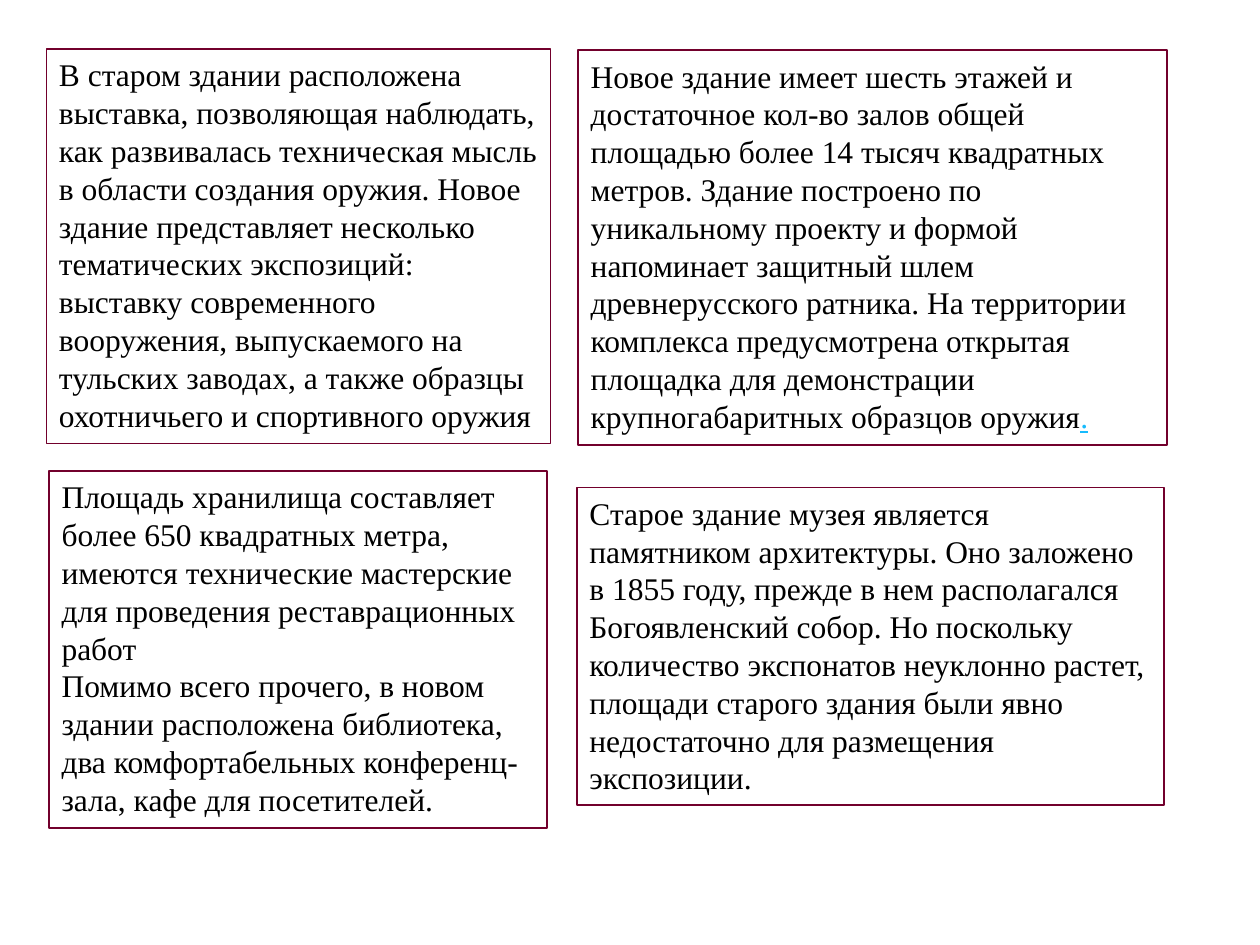
from dataclasses import dataclass

from pptx import Presentation
from pptx.dml.color import RGBColor
from pptx.enum.shapes import MSO_SHAPE
from pptx.enum.text import MSO_ANCHOR, MSO_AUTO_SIZE, PP_ALIGN
from pptx.util import Inches, Pt

COLORS = {"paper": "FFFFFF", "border": "72002C", "text": "000000", "accent": "17BBFD"}
FONT_FORMAT = {"name": "Times New Roman", "size": Pt(18)}
FRAME_FORMAT = {
    "word_wrap": True,
    "auto_size": MSO_AUTO_SIZE.SHAPE_TO_FIT_TEXT,
    "vertical_anchor": MSO_ANCHOR.TOP,
}


@dataclass
class TextPanel:
    left: float
    top: float
    width: float
    height: float
    paragraphs: tuple[str, ...]
    accent_ending: str = ""


PANELS = (
    TextPanel(0.37, 0.39, 4, 3.13, (
        "В старом здании расположена выставка, позволяющая наблюдать, как развивалась "
        "техническая мысль в области создания оружия. Новое здание представляет несколько "
        "тематических экспозиций: выставку современного вооружения, выпускаемого на "
        "тульских заводах, а также образцы охотничьего и спортивного оружия",
    )),
    TextPanel(4.58, 3.87, 4.66, 2.52, (
        "Старое здание музея является памятником архитектуры. Оно заложено в 1855 году, "
        "прежде в нем располагался Богоявленский собор. Но поскольку количество экспонатов "
        "неуклонно растет, площади старого здания были явно недостаточно для размещения "
        "экспозиции.",
    )),
    TextPanel(4.59, 0.4, 4.67, 3.13, (
        "Новое здание имеет шесть этажей и достаточное кол-во залов общей площадью более "
        "14 тысяч квадратных метров. Здание построено по уникальному проекту и формой "
        "напоминает защитный шлем древнерусского ратника. На территории комплекса "
        "предусмотрена открытая площадка для демонстрации крупногабаритных образцов оружия",
    ), accent_ending="."),
    TextPanel(0.39, 3.74, 3.95, 2.83, (
        "Площадь хранилища составляет более 650 квадратных метра, имеются технические "
        "мастерские для проведения реставрационных работ",
        "Помимо всего прочего, в новом здании расположена библиотека, два комфортабельных "
        "конференц-зала, кафе для посетителей.",
    )),
)


def color(name: str) -> RGBColor:
    return RGBColor.from_string(COLORS[name])


def apply_format(target, values: dict) -> None:
    for attribute, value in values.items():
        setattr(target, attribute, value)


def add_run(paragraph, text: str, color_name: str):
    run = paragraph.add_run()
    run.text = text
    apply_format(run.font, FONT_FORMAT)
    run.font.color.rgb = color(color_name)
    return run


def add_panel(slide, panel: TextPanel) -> None:
    bounds = (panel.left, panel.top, panel.width, panel.height)
    shape = slide.shapes.add_shape(MSO_SHAPE.RECTANGLE, *map(Inches, bounds))
    shape.shadow.inherit = False
    shape.fill.solid()
    shape.fill.fore_color.rgb = color("paper")
    shape.line.color.rgb = color("border")
    shape.line.width = Pt(1)

    frame = shape.text_frame
    apply_format(frame, FRAME_FORMAT)
    for index, text in enumerate(panel.paragraphs):
        paragraph = frame.add_paragraph() if index else frame.paragraphs[0]
        paragraph.alignment = PP_ALIGN.LEFT
        add_run(paragraph, text, "text")
    if panel.accent_ending:
        add_run(paragraph, panel.accent_ending, "accent").font.underline = True


def main() -> None:
    presentation = Presentation()
    presentation.slide_width = Inches(10)
    presentation.slide_height = Inches(7.5)
    slide = presentation.slides.add_slide(presentation.slide_layouts[6])
    for panel in PANELS:
        add_panel(slide, panel)
    presentation.save("out.pptx")


if __name__ == "__main__":
    main()
